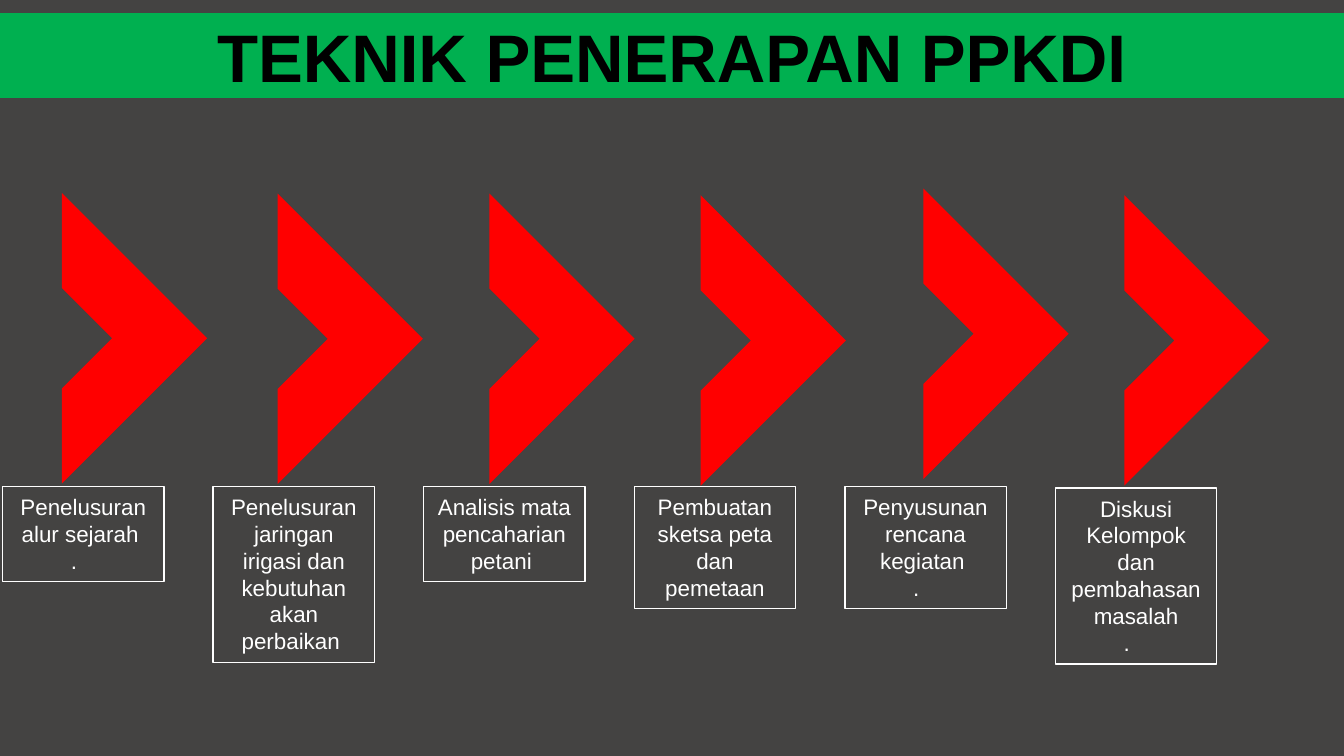
from dataclasses import dataclass

from pptx import Presentation
from pptx.dml.color import RGBColor
from pptx.enum import shapes, text
from pptx.util import Pt


@dataclass(frozen=True)
class Theme:
    background: RGBColor = RGBColor(0x44, 0x43, 0x42)
    banner: RGBColor = RGBColor(0x00, 0xB0, 0x50)
    chevron: RGBColor = RGBColor(0xFF, 0x00, 0x00)
    dark: RGBColor = RGBColor(0x00, 0x00, 0x00)
    light: RGBColor = RGBColor(0xFF, 0xFF, 0xFF)
    font: str = "Arial"
    title_size: float = 36
    label_size: float = 12
    label_line: float = 14.4


THEME = Theme()

# Label paragraphs, wrapped line count, label top, chevron centre
STEPS = [
    (["Penelusuran alur sejarah ", "."], 3, 260.6, (33, 181)),
    (["Penelusuran jaringan irigasi dan kebutuhan akan perbaikan "], 6, 260.6, (148.5, 181.3)),
    (["Analisis mata pencaharian petani "], 3, 260.6, (262, 181.3)),
    (["Pembuatan sketsa peta dan pemetaan"], 4, 260.6, (375.2, 182.2)),
    (["Penyusunan rencana kegiatan ", "."], 4, 260.6, (494.5, 178.6)),
    (["Diskusi Kelompok dan pembahasan masalah", "."], 6, 261.5, (602.1, 182.2)),
]


def add_box(slide, left, top, width, height):
    shape = slide.shapes.add_shape(shapes.MSO_SHAPE.RECTANGLE,
                                   Pt(left), Pt(top), Pt(width), Pt(height))
    shape.shadow.inherit = False
    shape.text_frame.word_wrap = True
    return shape


def format_paragraph(paragraph, size, color, bold=False):
    paragraph.alignment = text.PP_ALIGN.CENTER
    for run in paragraph.runs:
        run.font.name = THEME.font
        run.font.size = Pt(size)
        run.font.bold = bold
        run.font.color.rgb = color


def add_banner(slide, left, top, width, height):
    banner = add_box(slide, left, top, width, height)
    banner.fill.solid()
    banner.fill.fore_color.rgb = THEME.banner
    banner.line.fill.background()
    frame = banner.text_frame
    frame.vertical_anchor = text.MSO_ANCHOR.MIDDLE
    frame.text = "TEKNIK PENERAPAN PPKDI"
    frame.paragraphs[0].space_before = Pt(THEME.title_size * 0.2)
    format_paragraph(frame.paragraphs[0], THEME.title_size, THEME.dark, bold=True)


def add_chevron(slide, center_x, center_y, side=109.6, arm=35.7):
    """An L with slanted ends, turned so that its corner points right."""
    inner = side - arm
    builder = slide.shapes.build_freeform(0, 0, scale=Pt(1))
    builder.add_line_segments([(0, side), (side, side), (inner, inner),
                               (arm, inner), (arm, arm)])
    chevron = builder.convert_to_shape(Pt(center_x - side / 2), Pt(center_y - side / 2))
    chevron.rotation = 225
    chevron.shadow.inherit = False
    chevron.fill.solid()
    chevron.fill.fore_color.rgb = THEME.chevron
    chevron.line.fill.background()


def add_label(slide, left, top, width, lines, paragraphs):
    label = add_box(slide, left, top, width, 7.9 + lines * THEME.label_line)
    label.fill.background()
    label.line.color.rgb = THEME.light
    label.line.width = Pt(0.75)
    frame = label.text_frame
    frame.vertical_anchor = text.MSO_ANCHOR.TOP
    frame.text = "\n".join(paragraphs)
    for paragraph in frame.paragraphs:
        format_paragraph(paragraph, THEME.label_size, THEME.light)
    # The closing dot sits slightly left of centre
    if len(paragraphs) > 1:
        properties = frame.paragraphs[-1]._p.get_or_add_pPr()
        properties.set("marR", str(Pt(10)))


def add_steps(slide, left, pitch, label_width):
    for index, (paragraphs, lines, top, center) in enumerate(STEPS):
        add_chevron(slide, *center)
        add_label(slide, left + index * pitch, top, label_width, lines, paragraphs)


def main():
    presentation = Presentation()
    presentation.slide_width, presentation.slide_height = Pt(720), Pt(405)
    slide = presentation.slides.add_slide(presentation.slide_layouts[6])
    slide.background.fill.solid()
    slide.background.fill.fore_color.rgb = THEME.background

    # Title band, then the six steps
    add_banner(slide, 0, 7, 720, 45.5)
    add_steps(slide, left=1.4, pitch=112.8, label_width=86.5)
    presentation.save("out.pptx")


if __name__ == "__main__":
    main()
